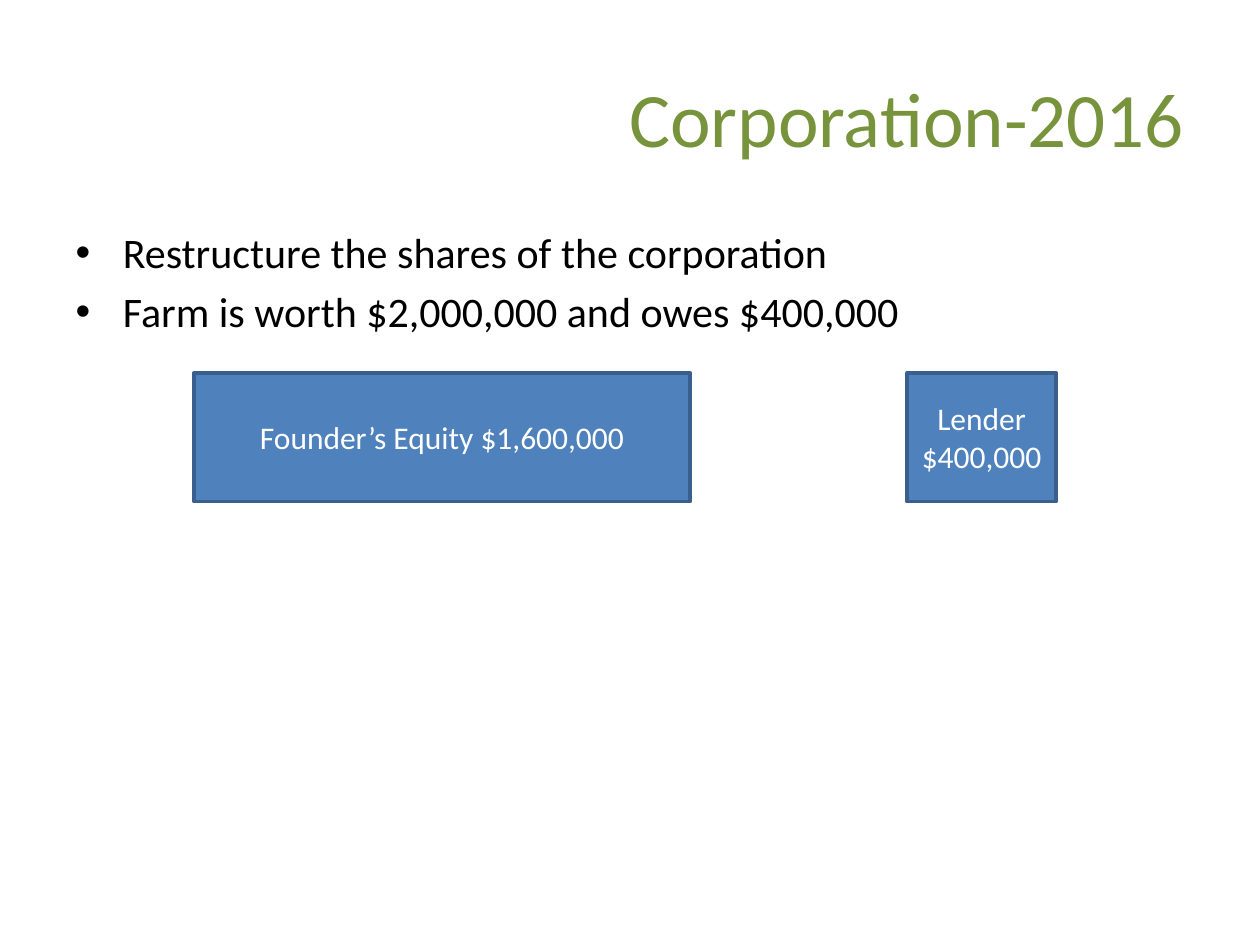
import pptx
import pptx.dml.color
import pptx.enum.shapes
import pptx.enum.text
import pptx.oxml
import pptx.oxml.ns
import pptx.util

Pt = pptx.util.Pt
ALIGN = pptx.enum.text.PP_ALIGN
MIDDLE = pptx.enum.text.MSO_ANCHOR.MIDDLE
TOP = pptx.enum.text.MSO_ANCHOR.TOP

MARGIN, CONTENT_WIDTH = 36, 648
BULLET_INDENT = 27


def color(hex_string):
    return pptx.dml.color.RGBColor.from_string(hex_string)


def set_values(target, values):
    for name, value in values.items():
        setattr(target, name, value)


def place(shape, box):
    names = ("left", "top", "width", "height")
    set_values(shape, dict(zip(names, map(Pt, box))))


def write(shape, lines, size, hex_string, align, anchor, bulleted=False):
    frame = shape.text_frame
    set_values(frame, {"word_wrap": True, "vertical_anchor": anchor,
                       "auto_size": pptx.enum.text.MSO_AUTO_SIZE.NONE})
    for index, line in enumerate(lines):
        para = frame.add_paragraph() if index else frame.paragraphs[0]
        para.text = line
        if bulleted:
            add_bullet(para)
        space = size * 0.2 if bulleted and index else 0
        set_values(para, {"alignment": align, "space_before": Pt(space)})
        set_values(para.font, {"name": "Calibri", "size": Pt(size)})
        para.font.color.rgb = color(hex_string)


def add_bullet(para):
    properties = para._p.get_or_add_pPr()
    properties.set("marL", str(Pt(BULLET_INDENT)))
    properties.set("indent", str(-Pt(BULLET_INDENT)))
    namespace = pptx.oxml.ns.nsdecls("a")
    for element in ('buFont {} typeface="Arial"', 'buChar {} char="•"'):
        properties.append(pptx.oxml.parse_xml(f"<a:{element.format(namespace)}/>"))


def add_title(page, box, text):
    title = page.shapes.title
    place(title, box)
    write(title, [text], 44, "77933C", ALIGN.RIGHT, MIDDLE)


def add_points(page, box, points):
    body = page.placeholders[1]
    place(body, box)
    write(body, points, 24, "000000", ALIGN.LEFT, TOP, bulleted=True)


def add_claims(page, box, claims):
    """Place one block per claim on the farm's value, each offset from the box's left edge."""
    left, top, height = box
    for offset, width, lines in claims:
        block = page.shapes.add_shape(
            pptx.enum.shapes.MSO_SHAPE.RECTANGLE,
            Pt(left + offset), Pt(top), Pt(width), Pt(height))
        block.shadow.inherit = False
        block.fill.solid()
        block.fill.fore_color.rgb = color("4F81BD")
        block.line.color.rgb = color("3A5F8C")
        block.line.width = Pt(2)
        write(block, lines, 18, "FFFFFF", ALIGN.CENTER, MIDDLE)


def main():
    deck = pptx.Presentation()
    set_values(deck, {"slide_width": Pt(720), "slide_height": Pt(540)})
    page = deck.slides.add_slide(deck.slide_layouts[1])
    add_title(page, (MARGIN, 21.6, CONTENT_WIDTH, 90), "Corporation-2016")
    add_points(page, (MARGIN, 126, CONTENT_WIDTH, 356.4), [
        "Restructure the shares of the corporation",
        "Farm is worth $2,000,000 and owes $400,000",
    ])
    add_claims(page, (110.8, 213.1, 73.6), [
        (0, 283.6, ["Founder’s Equity $1,600,000"]),
        (407.6, 85, ["Lender", "$400,000"]),
    ])
    deck.save("out.pptx")


if __name__ == "__main__":
    main()
